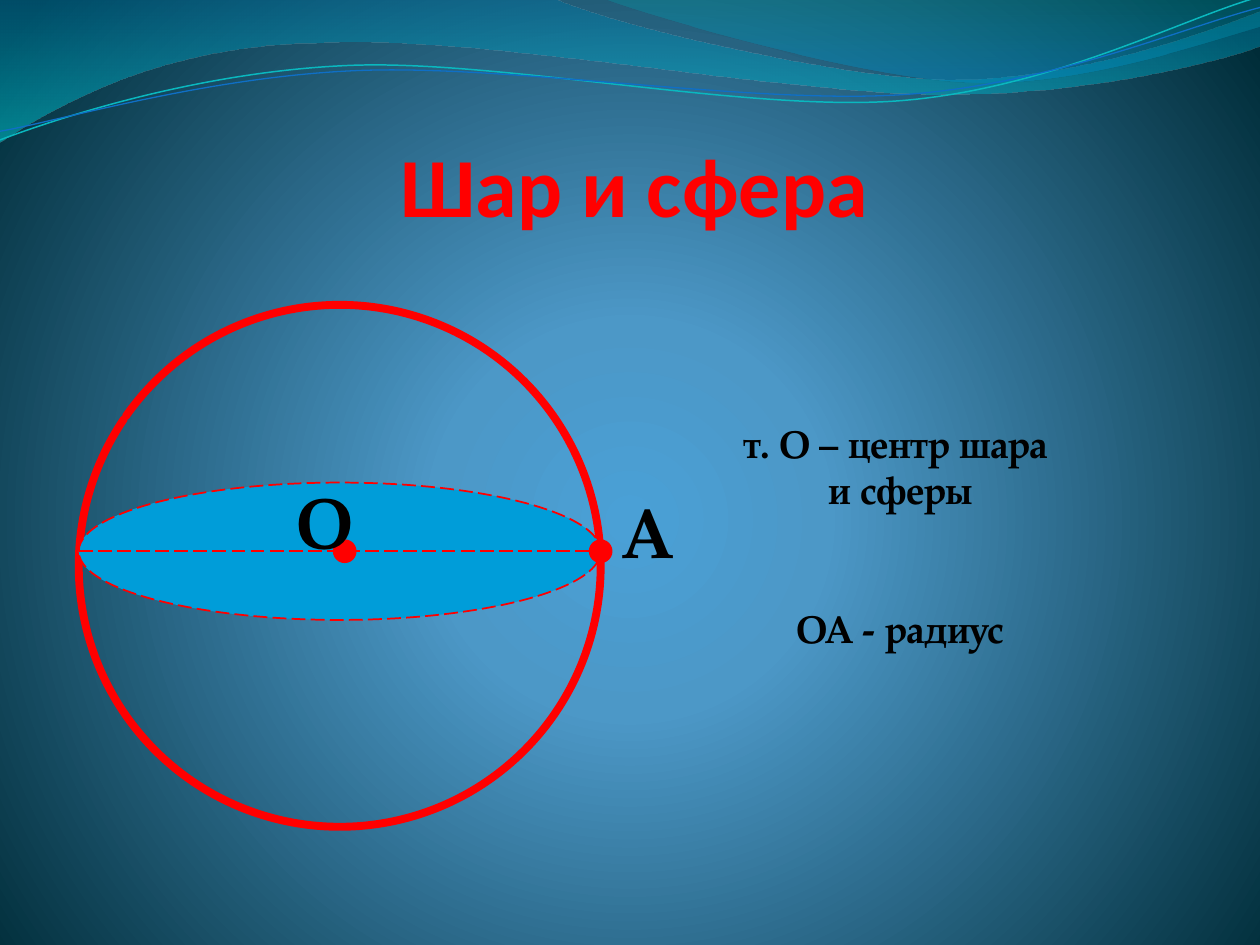
import pptx
import pptx.util
import pptx.dml.color
import pptx.enum.dml
import pptx.enum.shapes
import pptx.enum.text
from lxml import etree
from pptx.oxml.ns import qn

Pt = pptx.util.Pt
SHAPE = pptx.enum.shapes.MSO_SHAPE
ALIGN = pptx.enum.text.PP_ALIGN
ANCHOR = pptx.enum.text.MSO_ANCHOR

RED, BLACK, DISK_BLUE = "FF0000", "000000", "009DD9"
SERIF = "TeX Gyre Pagella"

TITLE = "Шар и сфера"
# text, space before
NOTES = [("т. О – центр шара ", 0), ("и сферы", 0), ("ОА - радиус", 53)]
# text, box, alignment
POINT_LABELS = [
    ("О", (152, 270, 56, 55.5), ALIGN.RIGHT),
    ("А", (348.5, 275.75, 90, 55.5), ALIGN.LEFT),
]

# Gradient stops: position %, colour, opacity %
BACKGROUND = [(0, "4AA0D6", 100), (25, "4C98C7", 100), (100, "002C38", 100)]

# Each segment holds one point (straight) or three (Bezier), in points
WAVE_BANDS = [
    ([[(0, -0.7)], [(316.8, -0.7)],
      [(342.7, 12.2), (478, 45.4), (545.8, 45.4)],
      [(614.2, 45.4), (689.8, 18.7), (720, 6.5)],
      [(720.7, 25.9)],
      [(707.8, 31.7), (626.4, 54.7), (537.1, 54)],
      [(447.8, 54), (275, 20.2), (185, 24.5)],
      [(92.9, 25.2), (33.1, 59.8), (-0.7, 81.4)]],
     [(0, "0074A1", 45), (100, "00C6CF", 55)]),
    ([[(344.9, -0.7)],
      [(366.5, 7.9), (491, 44.6), (553.7, 46.8)],
      [(616.3, 49.7), (691.9, 23), (720, 15.1)],
      [(720, 0)]],
     [(0, "00A1A9", 30), (80, "008BBF", 45)]),
]
# Points before the tilt
WAVE_TILT = -2.7
WAVE_LINES = [
    ([[(-1.4, 63)],
      [(33.8, 51.7), (114.1, 29.4), (199.8, 29.9)],
      [(284.9, 30.3), (425.8, 67.3), (512.4, 64.9)],
      [(599, 62.4), (676.4, 25.7), (720.2, 15.5)]], "0AB8BF", 0.85),
    ([[(-1.1, 58)],
      [(32.9, 53.8), (118.3, 32.5), (204.1, 33)],
      [(290.6, 33.4), (428.9, 63.1), (515.5, 61.4)],
      [(601.3, 59.6), (678.4, 30.1), (721.4, 21.3)]], "0F6FC6", 0.75),
]

# Sphere geometry
SPHERE_LEFT, SPHERE_TOP, DIAMETER = 45, 174.25, 298.25
EQUATOR_Y, EQUATOR_HEIGHT = 315, 78.5
DOT_SIZE = 11.5
DOT_CENTERS = [197, SPHERE_LEFT + DIAMETER]
ARC_ANGLES = (214.998, 214.228)


def rgb(color):
    return pptx.dml.color.RGBColor.from_string(color)


def box(left, top, width, height):
    return Pt(left), Pt(top), Pt(width), Pt(height)


def set_stops(fill, stops):
    """Turn the fill into a gradient with these stops."""
    fill.gradient()
    fill.gradient_angle = 270
    stop_list = fill.gradient_stops[0]._gs.getparent()
    for old_stop in list(stop_list):
        stop_list.remove(old_stop)
    for position, color, opacity in stops:
        stop = etree.SubElement(stop_list, qn("a:gs"), pos=str(position * 1000))
        shade = etree.SubElement(stop, qn("a:srgbClr"), val=color)
        if opacity < 100:
            etree.SubElement(shade, qn("a:alpha"), val=str(opacity * 1000))
    return stop_list.getparent()


def paint_background(slide):
    gradient = set_stops(slide.background.fill, BACKGROUND)
    gradient.remove(gradient.find(qn("a:lin")))
    circle = etree.SubElement(gradient, qn("a:path"))
    circle.set("path", "circle")
    etree.SubElement(circle, qn("a:fillToRect"),
                     l="10000", t="110000", r="10000", b="100000")


def add_wave(slide, segments, close):
    """Build the outline from straight lines, then join threes into Beziers."""
    start, *rest = [(Pt(x), Pt(y)) for segment in segments for x, y in segment]
    builder = slide.shapes.build_freeform(*start)
    builder.add_line_segments(rest, close=close)
    wave = builder.convert_to_shape()
    wave.shadow.inherit = False
    steps = iter(list(wave._element.iter(qn("a:lnTo"))))
    for segment in segments[1:]:
        first = next(steps)
        if len(segment) == 3:
            curve = etree.Element(qn("a:cubicBezTo"))
            first.addprevious(curve)
            for step in (first, next(steps), next(steps)):
                curve.append(step[0])
                step.getparent().remove(step)
    return wave


def set_line(line, color, width, dashed=False):
    line.color.rgb = rgb(color)
    line.width = Pt(width)
    if dashed:
        line.dash_style = pptx.enum.dml.MSO_LINE.LONG_DASH


def add_figure(slide, preset, place, fill, width, dashed=False):
    figure = slide.shapes.add_shape(preset, *box(*place))
    figure.shadow.inherit = False
    if fill:
        figure.fill.solid()
        figure.fill.fore_color.rgb = rgb(fill)
    else:
        figure.fill.background()
    set_line(figure.line, RED, width, dashed)
    return figure


def format_paragraph(paragraph, text, font, size, color, align):
    paragraph.text = text
    paragraph.alignment = align
    paragraph.font.name = font
    paragraph.font.size = Pt(size)
    paragraph.font.bold = True
    paragraph.font.color.rgb = rgb(color)


def add_text_frame(slide, place):
    frame = slide.shapes.add_textbox(*box(*place)).text_frame
    frame.word_wrap = True
    return frame


def add_title(slide):
    title = slide.shapes.title
    title.left, title.top, title.width, title.height = box(168.5, 66.5, 388, 67.5)
    frame = title.text_frame
    frame.margin_left = frame.margin_right = frame.margin_top = frame.margin_bottom = 0
    frame.vertical_anchor = ANCHOR.BOTTOM
    format_paragraph(frame.paragraphs[0], TITLE, "Calibri", 48, RED, ALIGN.CENTER)


def add_sphere(slide):
    sphere = add_figure(slide, SHAPE.ARC, (SPHERE_LEFT, SPHERE_TOP, DIAMETER, DIAMETER),
                        None, 4.5)
    sphere._element.spPr.find(qn("a:ln")).set("cap", "rnd")
    for index, degrees in enumerate(ARC_ANGLES):
        sphere.adjustments[index] = degrees * 0.6
    add_figure(slide, SHAPE.OVAL,
               (SPHERE_LEFT, EQUATOR_Y - EQUATOR_HEIGHT / 2, DIAMETER, EQUATOR_HEIGHT),
               DISK_BLUE, 1, dashed=True)
    axis = slide.shapes.add_connector(
        pptx.enum.shapes.MSO_CONNECTOR.STRAIGHT, Pt(SPHERE_LEFT), Pt(EQUATOR_Y),
        Pt(SPHERE_LEFT + DIAMETER), Pt(EQUATOR_Y))
    set_line(axis.line, RED, 1, dashed=True)
    etree.SubElement(axis._element.spPr, qn("a:effectLst"))
    for center, (name, place, align) in zip(DOT_CENTERS, POINT_LABELS):
        add_figure(slide, SHAPE.OVAL,
                   (center - DOT_SIZE / 2, EQUATOR_Y - DOT_SIZE / 2, DOT_SIZE, DOT_SIZE),
                   RED, 2)
        label = add_text_frame(slide, place)
        format_paragraph(label.paragraphs[0], name, SERIF, 40, BLACK, align)


def add_notes(slide):
    frame = add_text_frame(slide, (387.75, 236.5, 253.5, 140.5))
    for index, (text, gap) in enumerate(NOTES):
        paragraph = frame.add_paragraph() if index else frame.paragraphs[0]
        format_paragraph(paragraph, text, SERIF, 22, BLACK, ALIGN.CENTER)
        paragraph.space_before = Pt(gap)


def main():
    deck = pptx.Presentation()
    deck.slide_width, deck.slide_height = Pt(720), Pt(540)
    slide = deck.slides.add_slide(deck.slide_layouts[5])
    paint_background(slide)
    for segments, stops in WAVE_BANDS:
        band = add_wave(slide, segments, close=True)
        set_stops(band.fill, stops)
        band.line.fill.background()
    for segments, color, width in WAVE_LINES:
        stroke = add_wave(slide, segments, close=False)
        stroke.rotation = WAVE_TILT
        stroke.fill.background()
        set_line(stroke.line, color, width)
    add_title(slide)
    add_sphere(slide)
    add_notes(slide)
    deck.save("out.pptx")


if __name__ == "__main__":
    main()
